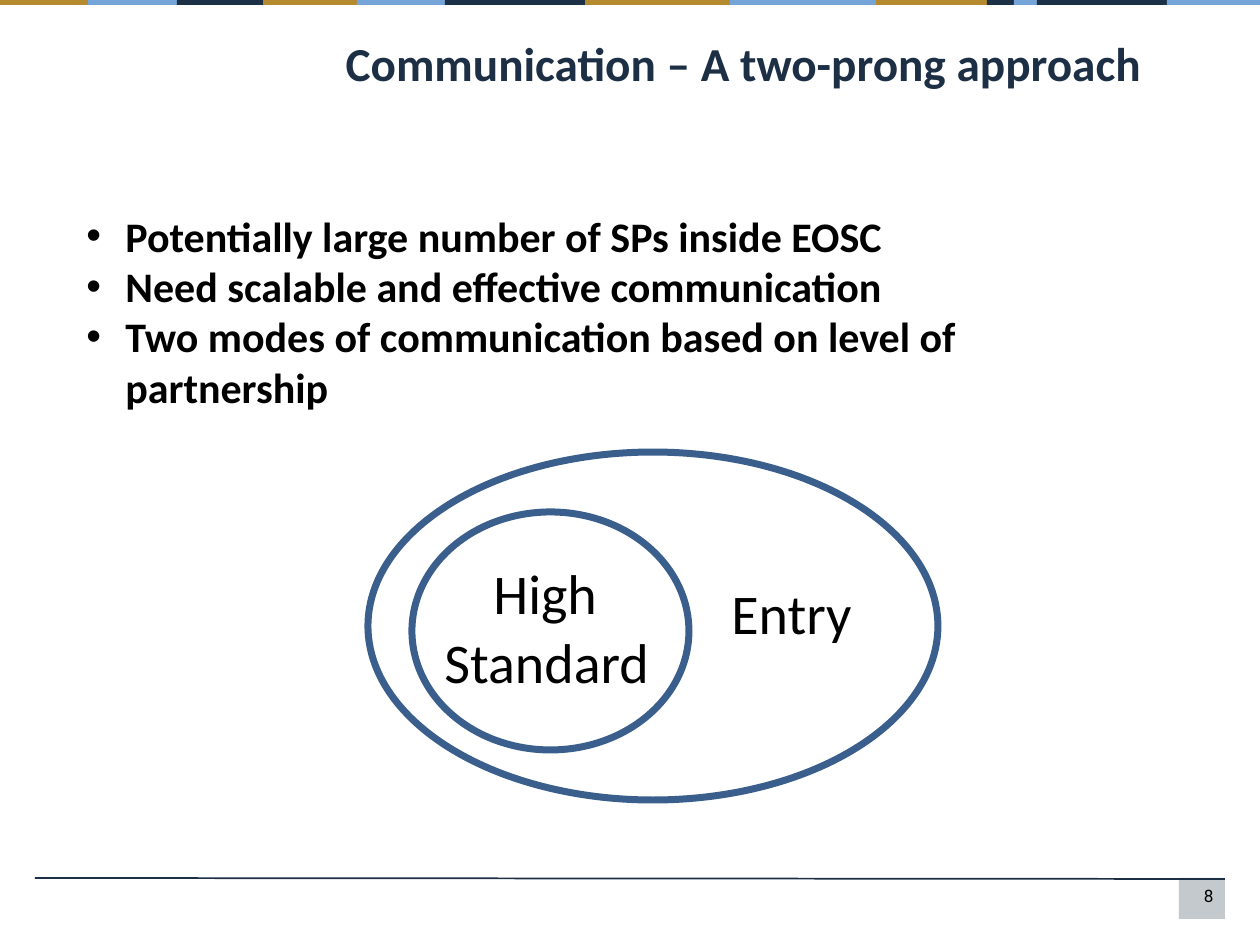
from lxml.etree import SubElement
from pptx import Presentation
from pptx.dml.color import RGBColor
from pptx.enum.shapes import MSO_CONNECTOR, MSO_SHAPE
from pptx.enum.text import MSO_ANCHOR, PP_ALIGN
from pptx.oxml.ns import qn
from pptx.util import Emu, Inches, Pt

PIXEL = Inches(1) // 126
NAVY, GOLD, BLUE = "1C3046", "B5892D", "75A5D8"
INK, OUTLINE, BLACK = "1D2F45", "3A5F8C", "000000"

# Right edge and colour of each segment in the top strip
STRIP = [(88, GOLD), (177, BLUE), (263, NAVY), (357, GOLD), (445, BLUE),
         (585, NAVY), (730, GOLD), (876, BLUE), (987, GOLD), (1014, NAVY),
         (1037, BLUE), (1167, NAVY), (1260, BLUE)]
BULLETS = ["Potentially large number of SPs inside EOSC",
           "Need scalable and effective communication",
           "Two modes of communication based on level of partnership"]


def px(value):
    return Emu(value * PIXEL)


def color(value):
    return RGBColor.from_string(value)


def add_shape(slide, kind, box, fill=None, line=None, width=1, alpha=None):
    shape = slide.shapes.add_shape(kind, *map(px, box))
    shape.shadow.inherit = False
    if fill:
        shape.fill.solid()
        shape.fill.fore_color.rgb = color(fill)
    else:
        shape.fill.background()
    if alpha:
        fill_color = shape.fill._xPr.find(qn("a:solidFill"))[0]
        SubElement(fill_color, qn("a:alpha"), val=str(alpha * 1000))
    if line:
        shape.line.color.rgb = color(line)
        shape.line.width = Pt(width)
    else:
        shape.line.fill.background()
    return shape


def add_rule(slide, start, end, line):
    rule = slide.shapes.add_connector(MSO_CONNECTOR.STRAIGHT, *map(px, start + end))
    rule.line.color.rgb = color(line)
    rule.line.width = Pt(1)
    SubElement(rule._element.spPr, qn("a:effectLst"))


def add_bullet(paragraph, indent):
    properties = paragraph._p.get_or_add_pPr()
    properties.set("marL", str(indent))
    properties.set("indent", str(-indent))
    SubElement(properties, qn("a:buFont"), typeface="Arial")
    SubElement(properties, qn("a:buChar"), char="•")


def write_text(shape, lines, size, font="Calibri", fill=BLACK, bold=False,
               align=PP_ALIGN.LEFT, anchor=MSO_ANCHOR.TOP, wrap=True, bullets=False):
    frame = shape.text_frame
    frame.word_wrap = wrap
    frame.vertical_anchor = anchor
    for index, line in enumerate(lines):
        paragraph = frame.add_paragraph() if index else frame.paragraphs[0]
        if bullets:
            add_bullet(paragraph, px(39))
        paragraph.alignment = align
        run = paragraph.add_run()
        run.text = line
        run.font.name = font
        run.font.size = Pt(size)
        run.font.bold = bold
        run.font.color.rgb = color(fill)


def add_text(slide, box, lines, size, **text_format):
    write_text(slide.shapes.add_textbox(*map(px, box)), lines, size, **text_format)


def add_title(slide, box, text):
    title = slide.shapes.title
    title.left, title.top, title.width, title.height = map(px, box)
    write_text(title, [text], 27, fill=INK, bold=True, anchor=MSO_ANCHOR.MIDDLE)


def add_strip(slide):
    left = 0
    for right, fill in STRIP:
        add_shape(slide, MSO_SHAPE.RECTANGLE, (left, 0, right - left, 5), fill=fill)
        left = right


def add_footer(slide):
    add_shape(slide, MSO_SHAPE.RECTANGLE, (1179, 878, 46, 41), fill=INK, alpha=26)
    add_rule(slide, (1225, 879), (35, 878), INK)
    add_text(slide, (903, 879, 323, 39), ["8"], 9.8, font="Roboto",
             align=PP_ALIGN.RIGHT)


def add_partnership_levels(slide):
    for box in [(412, 512, 277, 238), (368, 452, 570, 348)]:
        add_shape(slide, MSO_SHAPE.OVAL, box, line=OUTLINE, width=4)
    for label, box in [("High", (481, 552, 144, 81)),
                       ("Entry", (719, 572, 147, 81)),
                       ("Standard", (432, 621, 246, 81))]:
        add_text(slide, box, [label], 32, wrap=False)


def main():
    presentation = Presentation()
    presentation.slide_width = px(1260)
    presentation.slide_height = px(945)
    slide = presentation.slides.add_slide(presentation.slide_layouts[5])

    # Frame of the page
    add_strip(slide)
    add_footer(slide)

    # Title and key points
    add_title(slide, (333, 26, 893, 74), "Communication – A two-prong approach")
    add_text(slide, (74, 204, 1081, 217), BULLETS, 24, bold=True, bullets=True)

    # Nested levels of partnership
    add_partnership_levels(slide)
    presentation.save("out.pptx")


if __name__ == "__main__":
    main()
